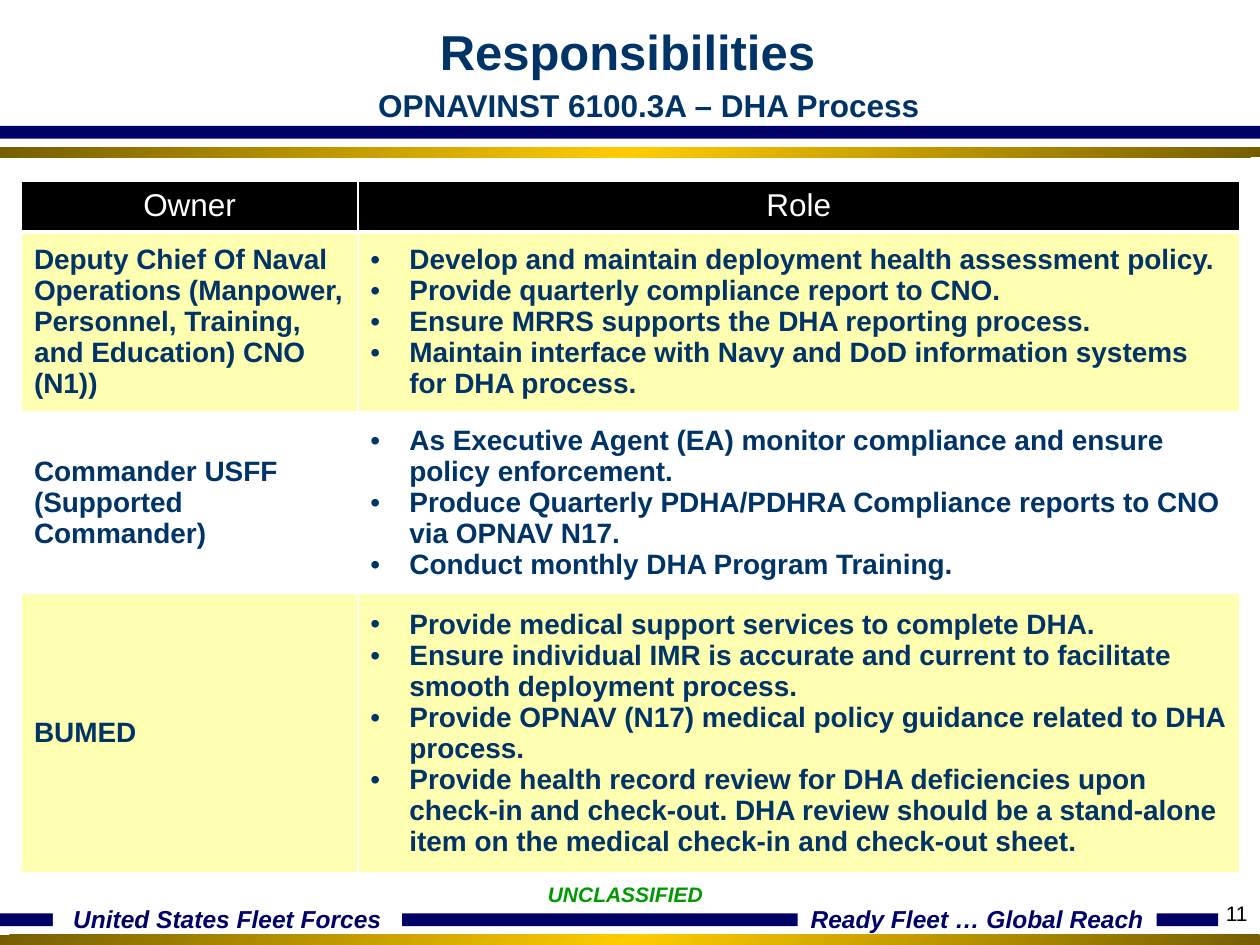
from typing import NamedTuple

import pptx
import pptx.dml.color
import pptx.enum.shapes
import pptx.enum.text
import pptx.oxml
import pptx.oxml.ns
import pptx.util
from copy import deepcopy

Inches = pptx.util.Inches
Pt = pptx.util.Pt
ALIGN = pptx.enum.text.PP_ALIGN
ANCHOR = pptx.enum.text.MSO_ANCHOR

COLORS = {
    "navy": "000066", "text": "003366", "gold": "FFCC00", "dark_gold": "765E00",
    "band": "FFFFB2", "white": "FFFFFF", "black": "000000", "green": "009900",
}


class Box(NamedTuple):
    left: float
    top: float
    width: float
    height: float


class Label(NamedTuple):
    text: str
    box: Box
    size: int
    color: str
    bold: bool = True
    italic: bool = True
    align: ALIGN = ALIGN.CENTER
    anchor: ANCHOR = ANCHOR.MIDDLE
    insets: tuple[float, float] = (0.1, 0)
    wrap: bool = True
    fill: str | None = None


class Duty(NamedTuple):
    owner: str
    roles: list[str]
    height: float
    fill: str | None


LABELS = [
    Label("United States Fleet Forces", Box(0.42, 7.18, 2.77, 0.23), 14, "navy", fill="white"),
    Label("Ready Fleet … Global Reach", Box(6.33, 7.18, 2.85, 0.23), 14, "navy", fill="white"),
    Label("11", Box(9.67, 7.08, 0.33, 0.33), 12, "black", bold=False, italic=False,
          align=ALIGN.RIGHT, insets=(0.1, 0.05), wrap=False, fill="white"),
    Label("UNCLASSIFIED", Box(4.25, 6.95, 1.44, 0.3), 12, "green", align=ALIGN.LEFT,
          anchor=ANCHOR.TOP, insets=(0.1, 0.05), wrap=False),
    Label("OPNAVINST 6100.3A – DHA Process", Box(1.86, 0.68, 6.58, 0.3), 18, "text",
          italic=False, insets=(0.05, 0)),
]
TITLE = Label("Responsibilities", Box(1.69, 0.17, 6.58, 0.47), 28, "text",
              italic=False, insets=(0.05, 0))

DUTIES = [
    Duty("Deputy Chief Of Naval Operations (Manpower, Personnel, Training, and Education) CNO (N1))", [
        "Develop and maintain deployment health assessment policy.",
        "Provide quarterly compliance report to CNO.",
        "Ensure MRRS supports the DHA reporting process.",
        "Maintain interface with Navy and DoD information systems for DHA process.",
    ], 1.43, "band"),
    Duty("Commander USFF\n(Supported Commander)", [
        "As Executive Agent (EA) monitor compliance and ensure policy enforcement.",
        "Produce Quarterly PDHA/PDHRA Compliance reports to CNO via OPNAV N17.",
        "Conduct monthly DHA Program Training.",
    ], 1.44, None),
    Duty("BUMED", [
        "Provide medical support services to complete DHA.",
        "Ensure individual IMR is accurate and current to facilitate smooth deployment process.",
        "Provide OPNAV (N17) medical policy guidance related to DHA process.",
        "Provide health record review for DHA deficiencies upon check-in and check-out. "
        "DHA review should be a stand-alone item on the medical check-in and check-out sheet.",
    ], 2.22, "band"),
]
HEADER_HEIGHT = 0.4
COLUMN_WIDTHS = [2.67, 7]


def rgb(name: str) -> pptx.dml.color.RGBColor:
    return pptx.dml.color.RGBColor.from_string(COLORS[name])


def place(shape, box: Box) -> None:
    shape.left, shape.top, shape.width, shape.height = map(Inches, box)


def format_runs(paragraph, size: int, color: str, bold: bool, italic: bool = False) -> None:
    for run in paragraph.runs:
        run.font.name = "Arial"
        run.font.size = Pt(size)
        run.font.bold = bold
        run.font.italic = italic
        run.font.color.rgb = rgb(color)


def write_label(shape, label: Label) -> None:
    frame = shape.text_frame
    frame.text = label.text
    frame.word_wrap = label.wrap
    frame.auto_size = pptx.enum.text.MSO_AUTO_SIZE.NONE
    frame.vertical_anchor = label.anchor
    frame.margin_left = frame.margin_right = Inches(label.insets[0])
    frame.margin_top = frame.margin_bottom = Inches(label.insets[1])
    paragraph = frame.paragraphs[0]
    paragraph.alignment = label.align
    format_runs(paragraph, label.size, label.color, label.bold, label.italic)


def add_label(slide, label: Label) -> None:
    shape = slide.shapes.add_textbox(*map(Inches, label.box))
    if label.fill:
        shape.fill.solid()
        shape.fill.fore_color.rgb = rgb(label.fill)
    write_label(shape, label)


def add_bar(slide, box: Box, gold: bool) -> None:
    bar = slide.shapes.add_shape(pptx.enum.shapes.MSO_SHAPE.RECTANGLE, *map(Inches, box))
    bar.shadow.inherit = False
    bar.line.fill.background()
    if not gold:
        bar.fill.solid()
        bar.fill.fore_color.rgb = rgb("navy")
        return
    bar.fill.gradient()
    bar.fill.gradient_angle = 315
    # A third stop makes the gradient symmetric
    stops = bar.fill._fill._gradFill.gsLst
    stops.append(deepcopy(stops[0]))
    for stop, position, color in zip(bar.fill.gradient_stops, (0, 0.5, 1),
                                     ("dark_gold", "gold", "dark_gold")):
        stop.position = position
        stop.color.rgb = rgb(color)


def add_borders(cell, top: int, bottom: int) -> None:
    properties = cell._tc.get_or_add_tcPr()
    widths = {"lnL": 1, "lnR": 1, "lnT": top, "lnB": bottom}
    for index, (tag, width) in enumerate(widths.items()):
        properties.insert(index, pptx.oxml.parse_xml(
            f'<a:{tag} {pptx.oxml.ns.nsdecls("a")} w="{Pt(width)}"><a:solidFill>'
            f'<a:srgbClr val="{COLORS["white"]}"/></a:solidFill></a:{tag}>'))


def add_bullet(paragraph) -> None:
    properties = paragraph._p.get_or_add_pPr()
    properties.set("marL", str(Inches(0.31)))
    properties.set("indent", str(-Inches(0.31)))
    for tag, attribute, value in (("buFont", "typeface", "Arial"), ("buChar", "char", "•")):
        properties.append(pptx.oxml.parse_xml(
            f'<a:{tag} {pptx.oxml.ns.nsdecls("a")} {attribute}="{value}"/>'))


def fill_cell(cell, text: str, fill: str | None, header: bool, first_duty: bool, bullets: bool) -> None:
    if fill:
        cell.fill.solid()
        cell.fill.fore_color.rgb = rgb(fill)
    else:
        cell.fill.background()
    add_borders(cell, top=3 if first_duty else 1, bottom=3 if header else 1)
    cell.vertical_anchor = ANCHOR.TOP if header else ANCHOR.MIDDLE
    cell.text_frame.text = text
    for paragraph in cell.text_frame.paragraphs:
        paragraph.alignment = ALIGN.CENTER if header else ALIGN.LEFT
        if bullets:
            add_bullet(paragraph)
        format_runs(paragraph, 18 if header else 16, "white" if header else "text", not header)


def add_duty_table(slide) -> None:
    heights = [HEADER_HEIGHT] + [duty.height for duty in DUTIES]
    box = Box(0.17, 1.44, sum(COLUMN_WIDTHS), sum(heights))
    table = slide.shapes.add_table(len(heights), 2, *map(Inches, box)).table
    table.first_row = table.horz_banding = False
    for column, width in zip(table.columns, COLUMN_WIDTHS):
        column.width = Inches(width)
    for row, height in zip(table.rows, heights):
        row.height = Inches(height)
    rows = [("Owner", "Role", "black")]
    rows += [(duty.owner, "\n".join(duty.roles), duty.fill) for duty in DUTIES]
    for index, (owner, role, fill) in enumerate(rows):
        header = index == 0
        fill_cell(table.cell(index, 0), owner, fill, header, index == 1, bullets=False)
        fill_cell(table.cell(index, 1), role, fill, header, index == 1, bullets=not header)


def main() -> None:
    presentation = pptx.Presentation()
    presentation.slide_width, presentation.slide_height = Inches(10), Inches(7.5)
    slide = presentation.slides.add_slide(presentation.slide_layouts[5])

    # Title
    place(slide.shapes.title, TITLE.box)
    write_label(slide.shapes.title, TITLE)

    # Header and footer bars
    add_bar(slide, Box(0, 1, 10, 0.1), gold=False)
    add_bar(slide, Box(0, 7.25, 9.67, 0.1), gold=False)
    for top in (1.17, 7.42):
        add_bar(slide, Box(0, top, 10, 0.08), gold=True)

    # Table, then subtitle and footer texts
    add_duty_table(slide)
    for label in LABELS:
        add_label(slide, label)

    presentation.save("out.pptx")


if __name__ == "__main__":
    main()
